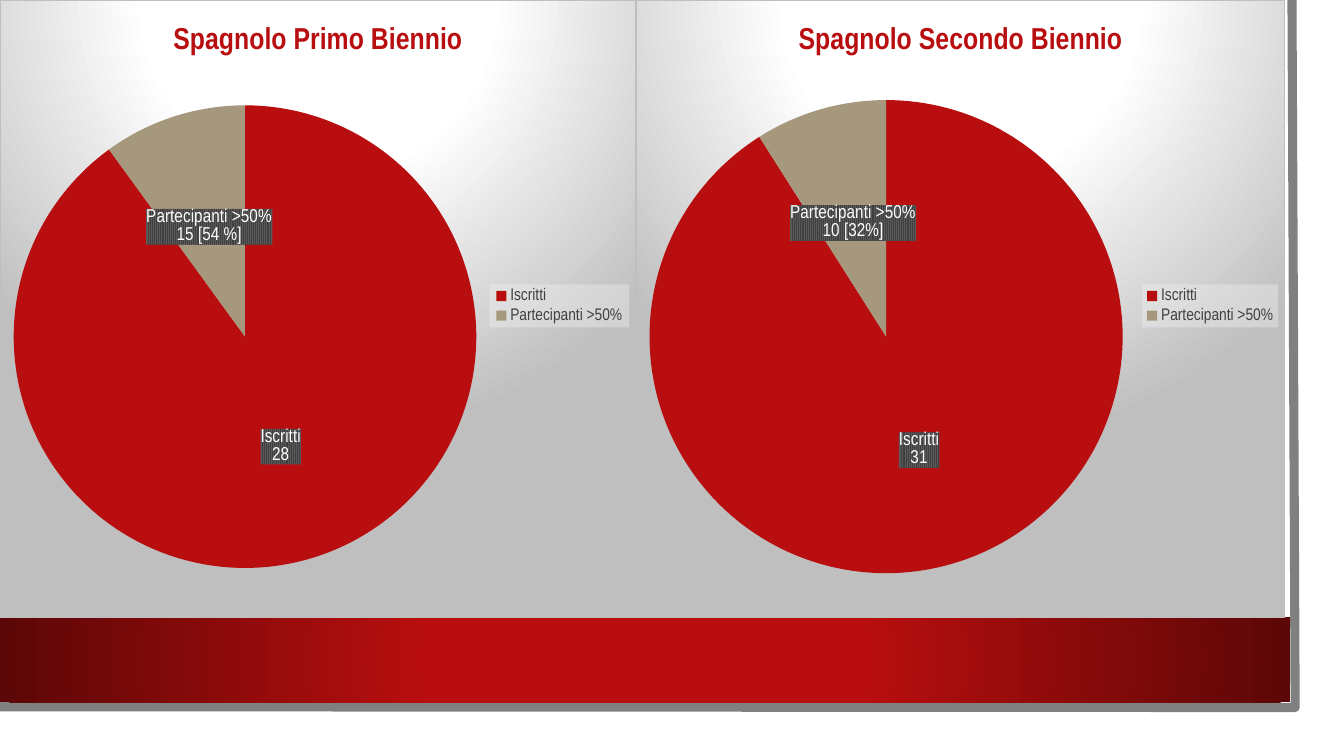
from pptx import Presentation
from pptx.chart.data import CategoryChartData
from pptx.dml.color import RGBColor
from pptx.enum import chart as ch, shapes
from pptx.oxml import parse_xml
from pptx.oxml.ns import nsdecls
from pptx.util import Cm, Pt

RED = RGBColor(0xB8, 0x0E, 0x0F)
DARK_RED = RGBColor(0x5C, 0x07, 0x07)
TAN = RGBColor(0xA6, 0x98, 0x7D)
WHITE = RGBColor(0xFF, 0xFF, 0xFF)
SILVER = RGBColor(0xBF, 0xBF, 0xBF)
GRAY = RGBColor(0x80, 0x80, 0x80)
CHARCOAL = RGBColor(0x40, 0x40, 0x40)
ASH = RGBColor(0x59, 0x59, 0x59)
PALE = RGBColor(0xF2, 0xF2, 0xF2)
BLACK = RGBColor(0, 0, 0)
FONT = "Arial Narrow"
CHART_HEIGHT = 15.57


def solid_xml(color, alpha=100):
    return (f'<a:solidFill><a:srgbClr val="{color}"><a:alpha val="{alpha * 1000}"/>'
            '</a:srgbClr></a:solidFill>')


def gradient_xml(stops, top, bottom, declarations=""):
    marks = "".join(f'<a:gs pos="{pos * 1000}"><a:srgbClr val="{color}"/></a:gs>'
                    for pos, color in stops)
    return (f'<a:gradFill {declarations} rotWithShape="1"><a:gsLst>{marks}</a:gsLst>'
            f'<a:path path="circle"><a:fillToRect l="50000" t="{top * 1000}" '
            f'r="50000" b="{bottom * 1000}"/></a:path></a:gradFill>')


def chart_style(inner):
    return parse_xml(f'<c:spPr {nsdecls("c", "a")}>{inner}</c:spPr>')


def manual_layout(left, top, width, height, target=""):
    return parse_xml(
        f'<c:layout {nsdecls("c")}><c:manualLayout>{target}'
        '<c:xMode val="edge"/><c:yMode val="edge"/>'
        f'<c:x val="{left}"/><c:y val="{top}"/><c:w val="{width}"/><c:h val="{height}"/>'
        '</c:manualLayout></c:layout>')


def set_font(font, size, color, bold=False):
    font.name = FONT
    font.size = Pt(size)
    font.bold = bold
    font.color.rgb = color


def add_panel(slide, left, top, width, height, color):
    panel = slide.shapes.add_shape(shapes.MSO_SHAPE.RECTANGLE, Cm(left), Cm(top),
                                   Cm(width), Cm(height))
    panel.shadow.inherit = False
    panel.fill.solid()
    panel.fill.fore_color.rgb = color
    panel.line.fill.background()
    return panel


def add_page_edge(slide):
    builder = slide.shapes.build_freeform(Cm(32.56), Cm(0))
    builder.add_line_segments([(Cm(32.64), Cm(17.83)), (Cm(-0.08), Cm(17.81))], close=False)
    edge = builder.convert_to_shape()
    edge.shadow.inherit = False
    edge.fill.background()
    edge.line.color.rgb = GRAY
    edge.line.width = Pt(6.5)


def add_red_band(slide):
    band = add_panel(slide, 0, 15.54, 32.51, 2.16, RED)
    solid = band.element.spPr.find("{*}solidFill")
    gradient = gradient_xml([(34, RED), (100, DARK_RED)], 50, 50, nsdecls("a"))
    band.element.spPr.replace(solid, parse_xml(gradient))


def label_slice(point, color, caption):
    point.format.fill.solid()
    point.format.fill.fore_color.rgb = color
    label = point.data_label
    label.text_frame.text = caption
    for paragraph in label.text_frame.paragraphs:
        for run in paragraph.runs:
            set_font(run.font, 13.3, WHITE)
    label.position = ch.XL_LABEL_POSITION.CENTER


def add_legend(chart, area):
    chart.has_legend = True
    chart.legend.position = ch.XL_LEGEND_POSITION.RIGHT
    chart.legend.include_in_layout = False
    set_font(chart.legend.font, 12, CHARCOAL)
    legend = chart.element.xpath(".//c:legend")[0]
    for automatic in legend.xpath("./c:layout"):
        legend.remove(automatic)
    overlay = legend.xpath("./c:overlay")[0]
    overlay.addprevious(manual_layout(*area))
    overlay.addnext(chart_style(solid_xml(PALE, 39)))


def add_enrolment_pie(slide, left, width, title, shares, captions, pie_area, legend_area):
    data = CategoryChartData(number_format="0")
    data.categories = ["Iscritti", "Partecipanti >50%"]
    data.add_series("Series 1", shares)
    chart = slide.shapes.add_chart(ch.XL_CHART_TYPE.PIE, Cm(left), Cm(0), Cm(width),
                                   Cm(CHART_HEIGHT), data).chart
    set_font(chart.font, 10, BLACK)
    chart.has_title = True
    chart.chart_title.text_frame.text = title
    set_font(chart.chart_title.text_frame.paragraphs[0].runs[0].font, 21.6, RED, True)
    chart.chart_title.include_in_layout = False

    pie = chart.plots[0]
    pie.vary_by_categories = True
    for index, (color, caption) in enumerate(zip((RED, TAN), captions)):
        label_slice(pie.series[0].points[index], color, caption)
    for label_text in chart.element.xpath(".//c:dLbl/c:tx"):
        label_text.addnext(chart_style(
            f'<a:pattFill prst="narVert"><a:fgClr><a:srgbClr val="{CHARCOAL}"/></a:fgClr>'
            f'<a:bgClr><a:srgbClr val="{ASH}"/></a:bgClr></a:pattFill>'))

    plot_area = chart.element.xpath(".//c:plotArea")[0]
    for automatic in plot_area.xpath("./c:layout"):
        plot_area.remove(automatic)
    plot_area.insert(0, manual_layout(*pie_area, '<c:layoutTarget val="inner"/>'))
    add_legend(chart, legend_area)
    backdrop = gradient_xml([(0, WHITE), (39, WHITE), (100, SILVER)], -80, 180)
    chart.element.xpath("./c:chart")[0].addnext(
        chart_style(f'{backdrop}<a:ln w="{Pt(0.75)}">{solid_xml(SILVER)}</a:ln>'))


def main():
    deck = Presentation()
    deck.slide_width, deck.slide_height = Cm(33.87), Cm(19.05)
    slide = deck.slides.add_slide(deck.slide_layouts[6])
    add_panel(slide, 0, 0, 33.27, 18.47, WHITE)
    add_page_edge(slide)
    add_red_band(slide)
    add_enrolment_pie(slide, 0, 16.03, "Spagnolo Primo Biennio", (90, 10),
                      ("Iscritti\n28", "Partecipanti >50%\n15 [54 %]"),
                      (0.02, 0.17, 0.73, 0.75), (0.77, 0.46, 0.22, 0.07))
    add_enrolment_pie(slide, 16.03, 16.36, "Spagnolo Secondo Biennio", (91, 9),
                      ("Iscritti\n31", "Partecipanti >50%\n10 [32%]"),
                      (0.02, 0.16, 0.73, 0.77), (0.78, 0.46, 0.21, 0.07))
    deck.save("out.pptx")


if __name__ == "__main__":
    main()
